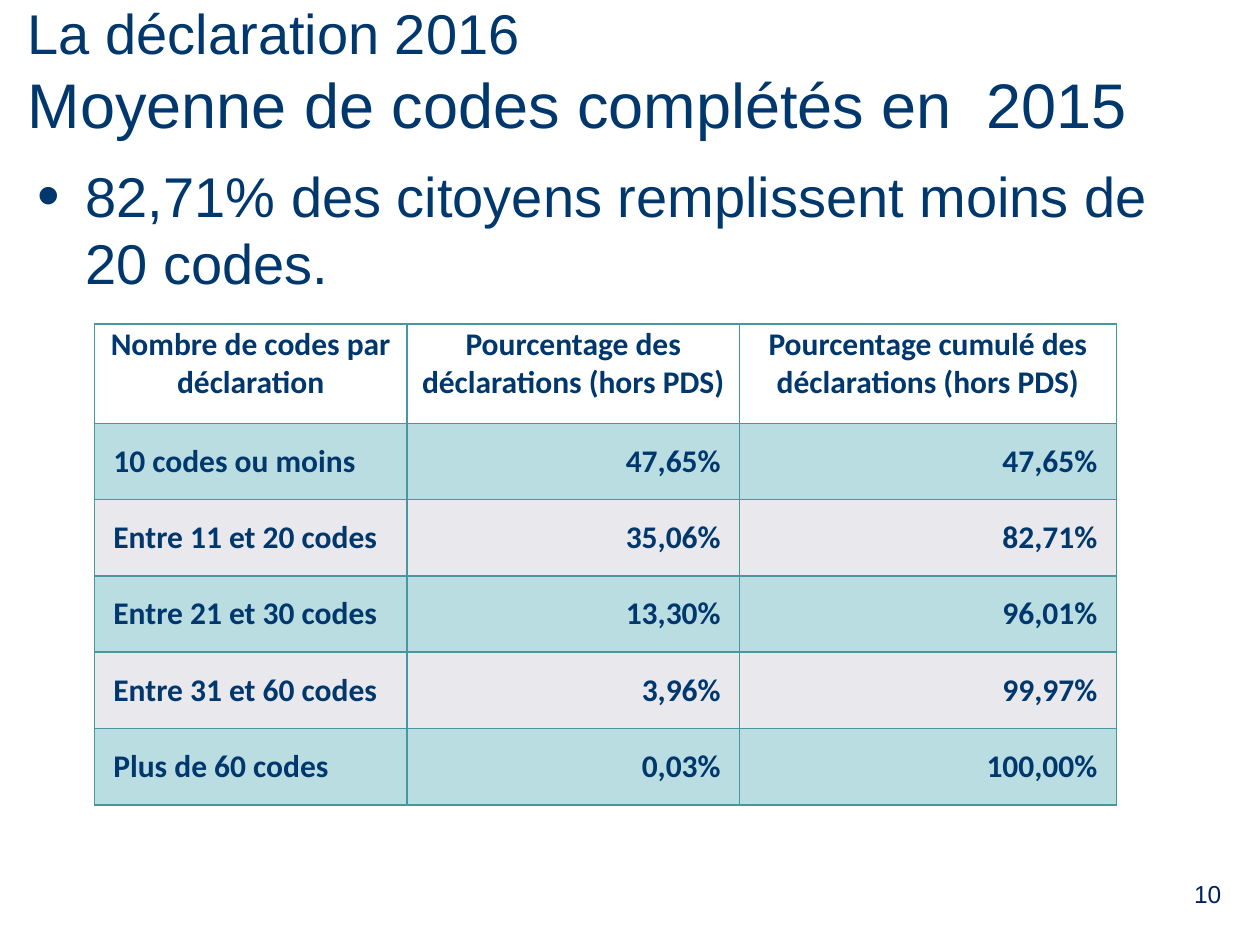
from lxml import etree
from pptx import Presentation
from pptx.dml.color import RGBColor
from pptx.enum import text
from pptx.oxml import ns
from pptx.util import Inches, Pt

COLORS = {
    "navy": "00376D",
    "number": "002060",
    "border": "4597A0",
    "header": "FFFFFF",
    "teal": "BADDE1",
    "grey": "E8E8ED",
}
HEADERS = [
    "Nombre de codes par déclaration",
    "Pourcentage des déclarations (hors PDS)",
    "Pourcentage cumulé des déclarations (hors PDS)",
]
ROWS = [
    ["10 codes ou moins", "47,65%", "47,65%"],
    ["Entre 11 et 20 codes", "35,06%", "82,71%"],
    ["Entre 21 et 30 codes", "13,30%", "96,01%"],
    ["Entre 31 et 60 codes", "3,96%", "99,97%"],
    ["Plus de 60 codes", "0,03%", "100,00%"],
]
LEFT, CENTER, RIGHT = (text.PP_ALIGN.LEFT, text.PP_ALIGN.CENTER, text.PP_ALIGN.RIGHT)


def color(name):
    return RGBColor.from_string(COLORS[name])


def add_xml(parent, tag, **attributes):
    return etree.SubElement(parent, ns.qn(tag), attributes)


class PageBuilder:
    heading_font = "Arial"
    table_font = "Calibri"

    def __init__(self, page):
        self.page = page

    def place(self, box, left, top, width, height):
        box.left, box.top = Inches(left), Inches(top)
        box.width, box.height = Inches(width), Inches(height)
        box.text_frame.word_wrap = True
        box.text_frame.auto_size = text.MSO_AUTO_SIZE.NONE

    def style(self, para, sizes, name="navy", font=None, bold=False, align=LEFT):
        para.alignment = align
        for span, size in zip(para.runs, sizes):
            span.font.name = font or self.heading_font
            span.font.size = Pt(size)
            span.font.bold = bold
            span.font.color.rgb = color(name)

    def title(self, lines, sizes, *area):
        box = self.page.shapes.title
        self.place(box, *area)
        box.text_frame.text = "\v".join(lines)
        box.text_frame.vertical_anchor = text.MSO_ANCHOR.MIDDLE
        self.style(box.text_frame.paragraphs[0], sizes)

    def bullet(self, words, size, *area):
        box = self.page.placeholders[1]
        self.place(box, *area)
        box.text_frame.text = words
        para = box.text_frame.paragraphs[0]
        props = para._p.get_or_add_pPr()
        props.set("marL", str(Inches(0.38)))
        props.set("indent", str(-Inches(0.38)))
        add_xml(add_xml(props, "a:buClr"), "a:srgbClr", val=COLORS["navy"])
        add_xml(props, "a:buSzPct", val="115000")
        add_xml(props, "a:buFont", typeface=self.heading_font)
        add_xml(props, "a:buChar", char="•")
        para.space_before = Pt(0)
        self.style(para, [size])

    def label(self, words, size, name, *area):
        box = self.page.shapes.add_textbox(0, 0, 0, 0)
        self.place(box, *area)
        box.text_frame.text = words
        self.style(box.text_frame.paragraphs[0], [size], name, align=CENTER)

    def cell(self, cell, words, fill, align, anchor, margins):
        cell.text_frame.text = words
        self.style(cell.text_frame.paragraphs[0], [18], font=self.table_font,
                   bold=True, align=align)
        cell.vertical_anchor = anchor
        (cell.margin_left, cell.margin_top,
         cell.margin_right, cell.margin_bottom) = map(Inches, margins)
        # Borders come before the fill in the cell properties
        props = cell._tc.get_or_add_tcPr()
        for side in ("a:lnL", "a:lnR", "a:lnT", "a:lnB"):
            line = add_xml(props, side, w=str(Pt(1)))
            add_xml(add_xml(line, "a:solidFill"), "a:srgbClr", val=COLORS["border"])
        cell.fill.solid()
        cell.fill.fore_color.rgb = color(fill)

    def table(self, left, top, widths, header_height, row_height):
        heights = [header_height] + [row_height] * len(ROWS)
        table = self.page.shapes.add_table(
            len(heights), len(widths), Inches(left), Inches(top),
            Inches(sum(widths)), Inches(sum(heights))).table
        table.first_row = table.horz_banding = False
        for column, width in zip(table.columns, widths):
            column.width = Inches(width)
        for row, height in zip(table.rows, heights):
            row.height = Inches(height)

        for c, words in enumerate(HEADERS):
            self.cell(table.cell(0, c), words, "header", CENTER,
                      text.MSO_ANCHOR.TOP, (0.01, 0.01, 0.01, 0))
        for r, values in enumerate(ROWS, start=1):
            for c, words in enumerate(values):
                self.cell(table.cell(r, c), words, "teal" if r % 2 else "grey",
                          RIGHT if c else LEFT, text.MSO_ANCHOR.BOTTOM, (0.15,) * 4)


def main():
    deck = Presentation()
    deck.slide_width, deck.slide_height = Inches(10), Inches(7.5)
    builder = PageBuilder(deck.slides.add_slide(deck.slide_layouts[1]))

    # Title and key message
    builder.title(["La déclaration 2016", "Moyenne de codes complétés en  2015"],
                  [32, 36], 0.12, 0.15, 9.37, 0.81)
    builder.bullet("82,71% des citoyens remplissent moins de 20 codes.", 32,
                   0.2, 1.23, 9.61, 5.67)

    # Page number
    builder.label("10", 14, "number", 9.21, 6.93, 0.75, 0.52)

    # Codes per declaration
    builder.table(0.75, 2.57, [2.48, 2.64, 2.99], 0.79, 0.6)

    deck.save("out.pptx")


if __name__ == "__main__":
    main()
